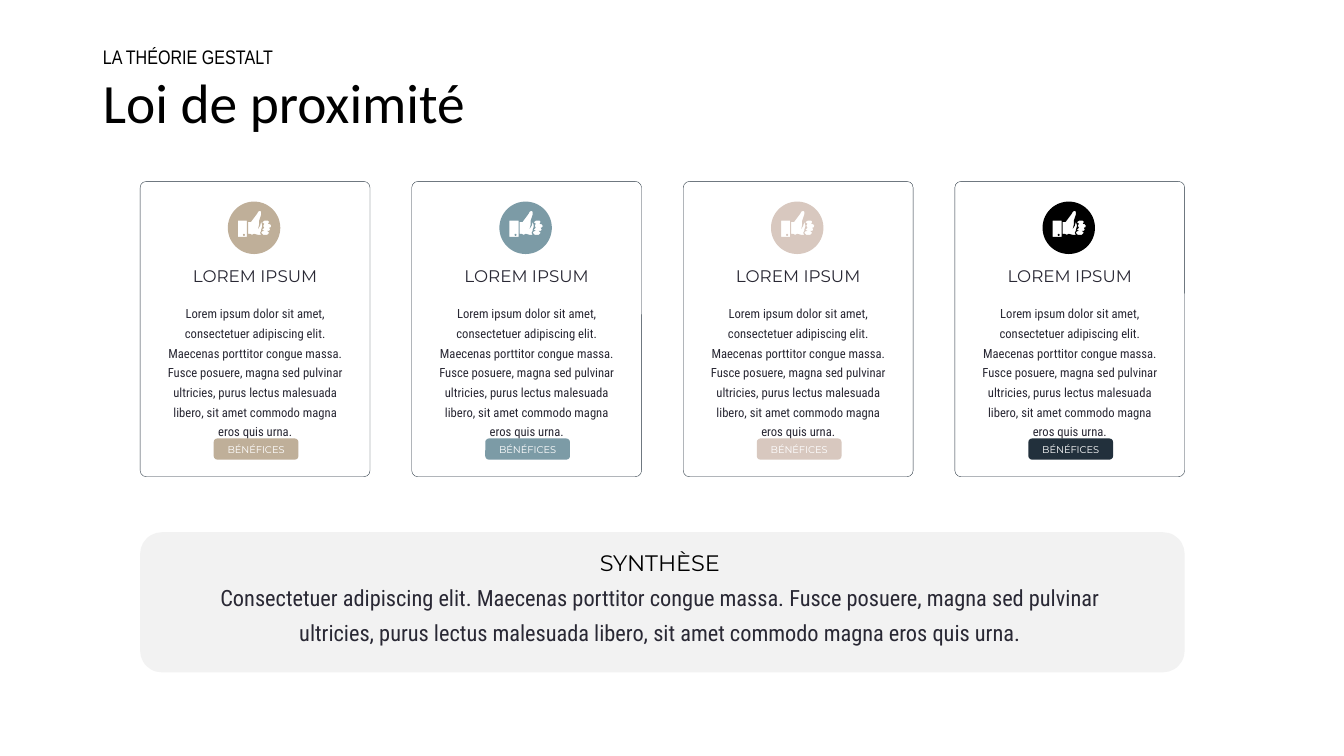
import math

import pptx
import pptx.dml.color
import pptx.enum.shapes
import pptx.enum.text
import pptx.oxml
import pptx.oxml.ns
import pptx.util

Inches = pptx.util.Inches
Pt = pptx.util.Pt
ALIGN = pptx.enum.text.PP_ALIGN
ANCHOR = pptx.enum.text.MSO_ANCHOR
FIT = pptx.enum.text.MSO_AUTO_SIZE

COLORS = {
    "black": "000000", "white": "FFFFFF", "ink": "292834", "navy": "22303C",
    "panel": "F2F2F2", "sand": "BFAF99", "teal": "7C9BA6", "blush": "D8C8BF",
}
HEAD_FONT = "Montserrat"
BODY_FONT = "Roboto Condensed"
CARD_TEXT = ("Lorem ipsum dolor sit amet, consectetuer adipiscing elit. "
             "Maecenas porttitor congue massa. Fusce posuere, magna sed pulvinar "
             "ultricies, purus lectus malesuada libero, sit amet commodo magna eros quis urna.")
SUMMARY = ("Consectetuer adipiscing elit. Maecenas porttitor congue massa. "
           "Fusce posuere, magna sed pulvinar ultricies, purus lectus malesuada libero, "
           "sit amet commodo magna eros quis urna.")

# Thumbs-up outlines, in hundredths of an inch from the icon's corner
CUFF = [(10, 19), (10, 35), (19, 35), (19, 19)]
PALM = [(33, 33), (32, 31), (33, 29), (33, 28), (34, 25), (34, 23), (33, 20), (34, 19),
        (33, 20), (32, 24), (30, 27), (31, 23), (31, 19), (33, 13), (33, 10), (32, 9),
        (30, 10), (29, 12), (26, 16), (23, 20), (20, 20), (20, 32), (22, 32), (24, 33),
        (26, 32), (30, 33)]
FINGERS = [(43, 24), (42, 22.5), (40, 22), (41, 20), (40, 19), (36, 19), (34, 20.5),
           (36, 22), (35, 24), (36, 26), (34, 28), (36, 29), (34, 29.5), (33, 31),
           (35, 33), (39, 33), (41, 31), (39, 29), (41, 29), (42, 28), (41, 26),
           (42.5, 25.5)]


def circle(cx, cy, radius, count):
    angles = [2 * math.pi * i / count for i in range(count)]
    return [(cx + radius * math.cos(a), cy + radius * math.sin(a)) for a in angles]


class SlideBuilder:
    def __init__(self, slide):
        self.slide = slide
        self.shapes = slide.shapes

    def color(self, name):
        return pptx.dml.color.RGBColor.from_string(COLORS[name])

    def group(self):
        self.shapes = self.slide.shapes.add_group_shape().shapes

    def paint(self, sp, fill=None, line=None):
        sp.shadow.inherit = False
        if fill:
            sp.fill.solid()
            sp.fill.fore_color.rgb = self.color(fill)
        else:
            sp.fill.background()
        if line:
            sp.line.color.rgb = self.color(line)
            sp.line.width = Pt(0.25)
        else:
            sp.line.fill.background()

    def style(self, p, size, font, color, align=ALIGN.CENTER, spacing=1.0, before=0):
        p.alignment = align
        p.line_spacing = spacing
        p.space_before = Pt(before)
        for r in p.runs:
            r.font.size = Pt(size)
            r.font.name = font
            r.font.color.rgb = self.color(color)

    def frame(self, sp):
        tf = sp.text_frame
        tf.word_wrap = True
        tf.auto_size = FIT.SHAPE_TO_FIT_TEXT
        tf.margin_left = tf.margin_right = Inches(0.07)
        tf.margin_top = tf.margin_bottom = Inches(0.04)
        tf.vertical_anchor = ANCHOR.TOP
        return tf

    def placeholder(self, sp, text, box, size, font):
        sp.left, sp.top, sp.width, sp.height = [Inches(v) for v in box]
        tf = sp.text_frame
        tf.text = text
        tf.auto_size = FIT.NONE
        tf.vertical_anchor = ANCHOR.MIDDLE
        p = tf.paragraphs[0]
        pPr = p._p.get_or_add_pPr()
        pPr.set("marL", "0")
        pPr.set("indent", "0")
        pPr.append(pptx.oxml.parse_xml("<a:buNone %s/>" % pptx.oxml.ns.nsdecls("a")))
        self.style(p, size, font, "black", ALIGN.LEFT, 0.9)

    def round_rect(self, box, radius, fill=None, line=None):
        kind = pptx.enum.shapes.MSO_SHAPE.ROUNDED_RECTANGLE
        sp = self.shapes.add_shape(kind, *[Inches(v) for v in box])
        sp.adjustments[0] = radius
        self.paint(sp, fill, line)
        return sp

    def text(self, box, heading, body, sizes, head_color, gap=0):
        tf = self.frame(self.shapes.add_textbox(*[Inches(v) for v in box]))
        tf.text = heading
        self.style(tf.paragraphs[0], sizes[0], HEAD_FONT, head_color, spacing=1.3)
        p = tf.add_paragraph()
        p.text = body
        self.style(p, sizes[1], BODY_FONT, "ink", spacing=1.3, before=gap)

    def label(self, box, text, fill):
        tf = self.frame(self.round_rect(box, 0.17, fill))
        tf.text = text
        self.style(tf.paragraphs[0], 7, HEAD_FONT, "white")

    def thumb_icon(self, left, top, fill):
        def place(points):
            return [(Inches(left + x / 100), Inches(top + y / 100)) for x, y in points]

        disc = place(circle(26, 26, 26, 72))
        builder = self.shapes.build_freeform(*disc[0], scale=1.0)
        builder.add_line_segments(disc[1:], close=True)
        for outline in (CUFF, circle(16, 33, 1, 12), PALM, FINGERS):
            points = place(outline)
            builder.move_to(*points[0])
            builder.add_line_segments(points[1:], close=True)
        self.paint(builder.convert_to_shape(), fill)

    def card(self, left, top, icon_color, label_color):
        self.group()
        self.round_rect((left, top, 2.28, 2.93), 0.027, line="navy")
        self.text((left + 0.18, top + 0.74, 1.92, 1.81), "LOREM IPSUM", CARD_TEXT,
                  (12, 9), "ink", gap=11)
        self.label((left + 0.73, top + 2.55, 0.84, 0.21), "BÉNÉFICES", label_color)
        self.thumb_icon(left + 0.87, top + 0.2, icon_color)


def main():
    prs = pptx.Presentation()
    prs.slide_width, prs.slide_height = Inches(13.33), Inches(7.5)
    s = prs.slides.add_slide(prs.slide_layouts[1])
    b = SlideBuilder(s)

    # Title and overline
    b.placeholder(s.shapes.title, "Loi de proximité", (0.92, 0.74, 11.5, 0.62), 39.6, "Calibri")
    b.placeholder(s.placeholders[1], "LA THÉORIE GESTALT", (0.92, 0.42, 11.5, 0.31),
                  14, "Arial Narrow")

    # Summary panel
    b.round_rect((1.39, 5.28, 10.36, 1.39), 0.155, "panel")
    b.text((1.92, 5.33, 9.25, 1.34), "SYNTHÈSE", SUMMARY, (16, 16), "black")

    # Four evenly spaced cards
    pitch = (10.36 - 2.28) / 3
    card_colors = [("sand", "sand"), ("teal", "teal"), ("blush", "blush"), ("black", "navy")]
    for i, (icon_color, label_color) in enumerate(card_colors):
        b.card(1.39 + i * pitch, 1.8, icon_color, label_color)

    prs.save("out.pptx")


if __name__ == "__main__":
    main()
